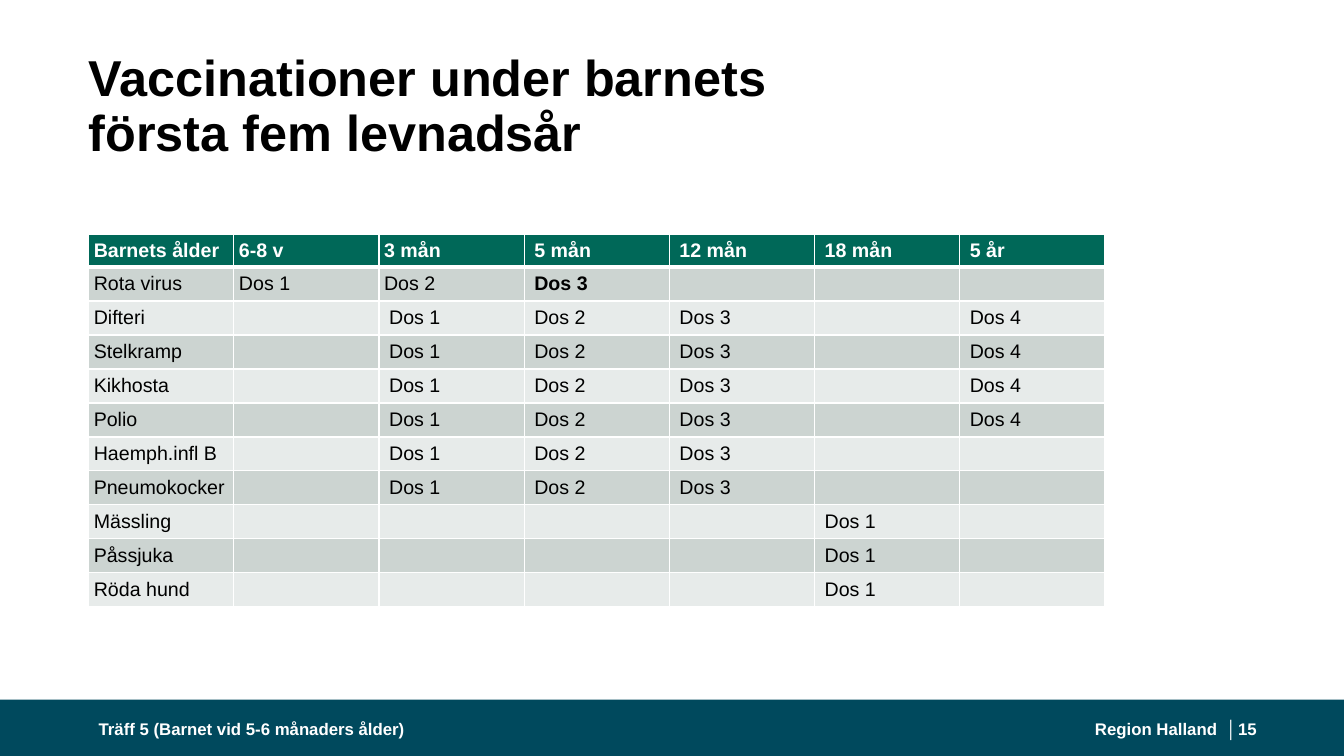
import pptx
import pptx.util
import pptx.dml.color
import pptx.enum.shapes
import pptx.enum.text
import pptx.oxml
import pptx.oxml.ns
import lxml.etree

Inches = pptx.util.Inches
Pt = pptx.util.Pt
Align = pptx.enum.text.PP_ALIGN

COLORS = {
    "text": "000000",
    "white": "FFFFFF",
    "bar": "00495D",
    "header": "006858",
    "band_dark": "CCD4D1",
    "band_light": "E7EBEA",
}

AGES = ["Barnets ålder", "6-8 v", "3 mån", "5 mån", "12 mån", "18 mån", "5 år"]
THREE_DOSES = ["", "Dos 1", "Dos 2", "Dos 3", "", ""]
FOUR_DOSES = ["", "Dos 1", "Dos 2", "Dos 3", "", "Dos 4"]
TODDLER_DOSE = ["", "", "", "", "Dos 1", ""]
SCHEDULE = {
    "Rota virus": ["Dos 1", "Dos 2", "Dos 3", "", "", ""],
    "Difteri": FOUR_DOSES,
    "Stelkramp": FOUR_DOSES,
    "Kikhosta": FOUR_DOSES,
    "Polio": FOUR_DOSES,
    "Haemph.infl B": THREE_DOSES,
    "Pneumokocker": THREE_DOSES,
    "Mässling": TODDLER_DOSE,
    "Påssjuka": TODDLER_DOSE,
    "Röda hund": TODDLER_DOSE,
}


class SlideBuilder:
    font_name = "Arial"

    def __init__(self, slide):
        self.slide = slide

    def color(self, name):
        return pptx.dml.color.RGBColor.from_string(COLORS[name])

    def format_runs(self, paragraph, size, color, bold):
        for run in paragraph.runs:
            run.font.name = self.font_name
            run.font.size = Pt(size)
            run.font.bold = bold
            run.font.color.rgb = self.color(color)

    def remove_insets(self, text_frame):
        text_frame.margin_left = text_frame.margin_right = 0
        text_frame.margin_top = text_frame.margin_bottom = 0

    def title(self, text, left, top, width, height):
        shape = self.slide.shapes.title
        shape.left, shape.top = Inches(left), Inches(top)
        shape.width, shape.height = Inches(width), Inches(height)
        text_frame = shape.text_frame
        text_frame.text = text
        text_frame.auto_size = pptx.enum.text.MSO_AUTO_SIZE.NONE
        text_frame.vertical_anchor = pptx.enum.text.MSO_ANCHOR.MIDDLE
        self.remove_insets(text_frame)
        paragraph = text_frame.paragraphs[0]
        paragraph.alignment = Align.LEFT
        paragraph.line_spacing = 0.9
        paragraph.space_before = Pt(0)
        self.format_runs(paragraph, 36, "text", True)

    def bar(self, left, top, width, height):
        shape = self.slide.shapes.add_shape(
            pptx.enum.shapes.MSO_SHAPE.RECTANGLE,
            Inches(left), Inches(top), Inches(width), Inches(height))
        shape.shadow.inherit = False
        shape.fill.solid()
        shape.fill.fore_color.rgb = self.color("bar")
        shape.line.fill.background()

    def footer(self, text, left, top, width, height, alignment=Align.LEFT, inset=False):
        shape = self.slide.shapes.add_textbox(
            Inches(left), Inches(top), Inches(width), Inches(height))
        text_frame = shape.text_frame
        text_frame.word_wrap = True
        text_frame.text = text
        if not inset:
            self.remove_insets(text_frame)
            text_frame.vertical_anchor = pptx.enum.text.MSO_ANCHOR.MIDDLE
        paragraph = text_frame.paragraphs[0]
        paragraph.alignment = alignment
        self.format_runs(paragraph, 12, "white", True)

    def borders(self, cell, top, bottom):
        properties = cell._tc.get_or_add_tcPr()
        widths = {"lnL": 1, "lnR": 1, "lnT": top, "lnB": bottom}
        for position, (side, width) in enumerate(widths.items()):
            line = pptx.oxml.parse_xml(
                f'<a:{side} {pptx.oxml.ns.nsdecls("a")} w="{Pt(width)}"><a:solidFill>'
                f'<a:srgbClr val="{COLORS["white"]}"/></a:solidFill></a:{side}>')
            properties.insert(position, line)

    def cell(self, cell, text, row, column):
        is_header = row == 0
        cell.text = text
        cell.vertical_anchor = pptx.enum.text.MSO_ANCHOR.MIDDLE
        if text and (column == 0 or (row < 2 and column < 3)):
            cell.margin_left = cell.margin_right = Inches(0.05)
            cell.margin_top = cell.margin_bottom = 0
        paragraph = cell.text_frame.paragraphs[0]
        if text:
            bold = is_header or (row, column) == (1, 3)
            self.format_runs(paragraph, 14, "white" if is_header else "text", bold)
        else:
            lxml.etree.SubElement(
                paragraph._p, pptx.oxml.ns.qn("a:endParaRPr"), sz="1400")
        band = "band_dark" if row % 2 else "band_light"
        cell.fill.solid()
        cell.fill.fore_color.rgb = self.color("header" if is_header else band)
        self.borders(cell, 3 if row == 1 else 1, 3 if is_header else 1)

    def table(self, rows, left, top, column_width, row_height):
        table = self.slide.shapes.add_table(
            len(rows), len(rows[0]), Inches(left), Inches(top),
            Inches(column_width * len(rows[0])), Inches(row_height * len(rows))).table
        for column in table.columns:
            column.width = Inches(column_width)
        for row_index, texts in enumerate(rows):
            table.rows[row_index].height = Inches(row_height)
            for column_index, text in enumerate(texts):
                self.cell(table.cell(row_index, column_index), text,
                          row_index, column_index)


def main():
    presentation = pptx.Presentation()
    presentation.slide_width = Inches(13.33)
    presentation.slide_height = Inches(7.5)
    builder = SlideBuilder(presentation.slides.add_slide(presentation.slide_layouts[5]))
    builder.bar(0, 6.94, 13.33, 0.56)
    builder.title("Vaccinationer under barnets \vförsta fem levnadsår", 0.88, 0.36, 11.58, 1.42)
    rows = [AGES] + [[vaccine] + doses for vaccine, doses in SCHEDULE.items()]
    builder.table(rows, 0.88, 2.33, 1.44, 0.32)
    builder.footer("Region Halland  │", 10.7, 7.06, 1.57, 0.35, Align.RIGHT)
    builder.footer("Träff 5 (Barnet vid 5-6 månaders ålder)", 0.88, 7.08, 7.71, 0.5, inset=True)
    builder.footer("15", 12.28, 7.06, 0.24, 0.35)
    presentation.save("out.pptx")


if __name__ == "__main__":
    main()
